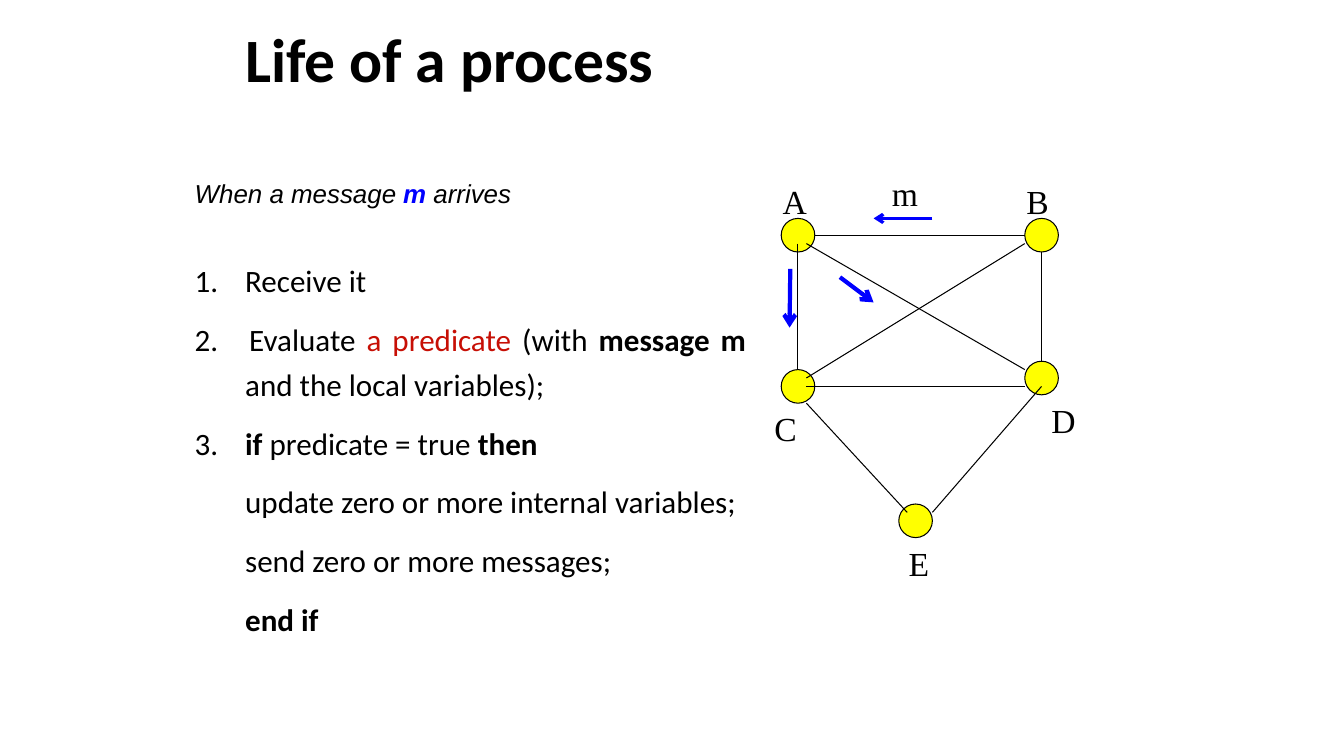
from pptx import Presentation
from pptx.dml.color import RGBColor
from pptx.enum.shapes import MSO_CONNECTOR as CONN, MSO_SHAPE as SHAPE
from pptx.enum.text import MSO_ANCHOR as ANCHOR, MSO_AUTO_SIZE as AUTO, PP_ALIGN as ALIGN
from pptx.oxml.ns import qn
from pptx.util import Pt
from lxml import etree

BLACK, BLUE, RED, YELLOW = "000000", "0000FF", "C70F05", "FFFF00"

# Content: each run is (text, colour, bold)
TITLE = "Life of a process"
INTRO = [("When a message ", BLACK, False), ("m", BLUE, True), (" arrives", BLACK, False)]
# Steps: numbered, line spacing, space before, runs
STEPS = [
    (True, 0.9, 40, [("1. \tReceive it", BLACK, False)]),
    (True, 1.2, 10, [("2. \tEvaluate ", BLACK, False), ("a predicate", RED, False),
                     (" (with ", BLACK, False), ("message m", BLACK, True),
                     (" and the local variables);", BLACK, False)]),
    (True, 1.2, 10, [("3. \t", BLACK, False), ("if", BLACK, True),
                     (" predicate = true ", BLACK, False), ("then", BLACK, True)]),
    (False, 1.2, 10, [("update zero or more internal variables;", BLACK, False)]),
    (False, 1.2, 10, [("send zero or more messages;", BLACK, False)]),
    (False, 1.2, 10, [("end if", BLACK, True)]),
]

# Graph: node centres (A, E, C, D, B), edge ends, labels (left, top, width), message arrows
NODE = 24
NODES = [(570, 168), (654, 372), (570, 276), (744, 270), (744, 168)]
EDGES = [
    (582, 168, 732, 168), (744, 180, 744, 258), (732, 276, 576, 276), (744, 276, 666, 366),
    (576, 288, 648, 366), (576, 174, 732, 264), (570, 174, 570, 264), (732, 174, 576, 270),
]
LABELS = {"A": (552, 126, 32.4), "B": (726, 126, 31), "C": (546, 288, 31),
          "D": (744, 282, 31.7), "E": (642, 384, 29.5), "m": (630, 120, 33.1)}
ARROWS = [((666, 156, 624, 156), 2.25), ((564.5, 192, 564, 234), 3), ((600, 198, 624, 216), 3)]


def rgb(value):
    return RGBColor.from_string(value)


def set_font(font, name, size, color=BLACK, bold=False, italic=False):
    font.name, font.size, font.bold, font.italic = name, Pt(size), bold, italic
    font.color.rgb = rgb(color)


def add_box(s, x, y, w, h):
    tf = s.shapes.add_textbox(Pt(x), Pt(y), Pt(w), Pt(h)).text_frame
    tf.word_wrap = True
    return tf


def add_runs(p, runs, name, size, italic=False):
    p.font.name, p.font.size, p.font.italic = name, Pt(size), italic
    for text, color, bold in runs:
        r = p.add_run()
        r.text = text
        set_font(r.font, name, size, color, bold, italic)


def add_line(s, ends, color, width, arrow=False):
    line = s.shapes.add_connector(CONN.STRAIGHT, *map(Pt, ends))
    line.line.color.rgb = rgb(color)
    line.line.width = Pt(width)
    if arrow:
        etree.SubElement(line.line._get_or_add_ln(), qn("a:tailEnd"), type="arrow")
    etree.SubElement(line._element.spPr, qn("a:effectLst"))


prs = Presentation()
prs.slide_width, prs.slide_height = Pt(960), Pt(540)
s = prs.slides.add_slide(prs.slide_layouts[6])

# Title
tf = add_box(s, 168, 0, 612, 90)
tf.vertical_anchor = ANCHOR.MIDDLE
p = tf.paragraphs[0]
p.text, p.line_spacing = TITLE, 0.9
set_font(p.font, "Calibri", 44, bold=True)

# Steps, with hanging numbers
tf = add_box(s, 132, 126, 408, 342)
p = tf.paragraphs[0]
p.line_spacing, p.space_before = 0.9, Pt(10)
add_runs(p, INTRO, "Arial", 18.5, italic=True)
for numbered, spacing, before, runs in STEPS:
    p = tf.add_paragraph()
    p.alignment, p.line_spacing, p.space_before = ALIGN.JUSTIFY, spacing, Pt(before)
    pPr = p._p.get_or_add_pPr()
    pPr.set("marL", str(Pt(36)))
    pPr.set("indent", str(Pt(-36 if numbered else 0)))
    add_runs(p, runs, "Calibri", 22.2)

# Nodes
for cx, cy in NODES:
    sp = s.shapes.add_shape(SHAPE.OVAL, Pt(cx - NODE / 2), Pt(cy - NODE / 2), Pt(NODE), Pt(NODE))
    sp.shadow.inherit = False
    sp.fill.solid()
    sp.fill.fore_color.rgb = rgb(YELLOW)
    sp.line.color.rgb = rgb(BLACK)
    sp.line.width = Pt(0.75)

# Edges and message arrows
for ends in EDGES:
    add_line(s, ends, BLACK, 0.75)
for ends, width in ARROWS:
    add_line(s, ends, BLUE, width, arrow=True)

# Labels
for text, (x, y, w) in LABELS.items():
    tf = add_box(s, x, y, w, 36.7)
    tf.word_wrap = False
    tf.auto_size = AUTO.SHAPE_TO_FIT_TEXT
    p = tf.paragraphs[0]
    p.text = text
    set_font(p.font, "Times New Roman", 24)

prs.save("out.pptx")
